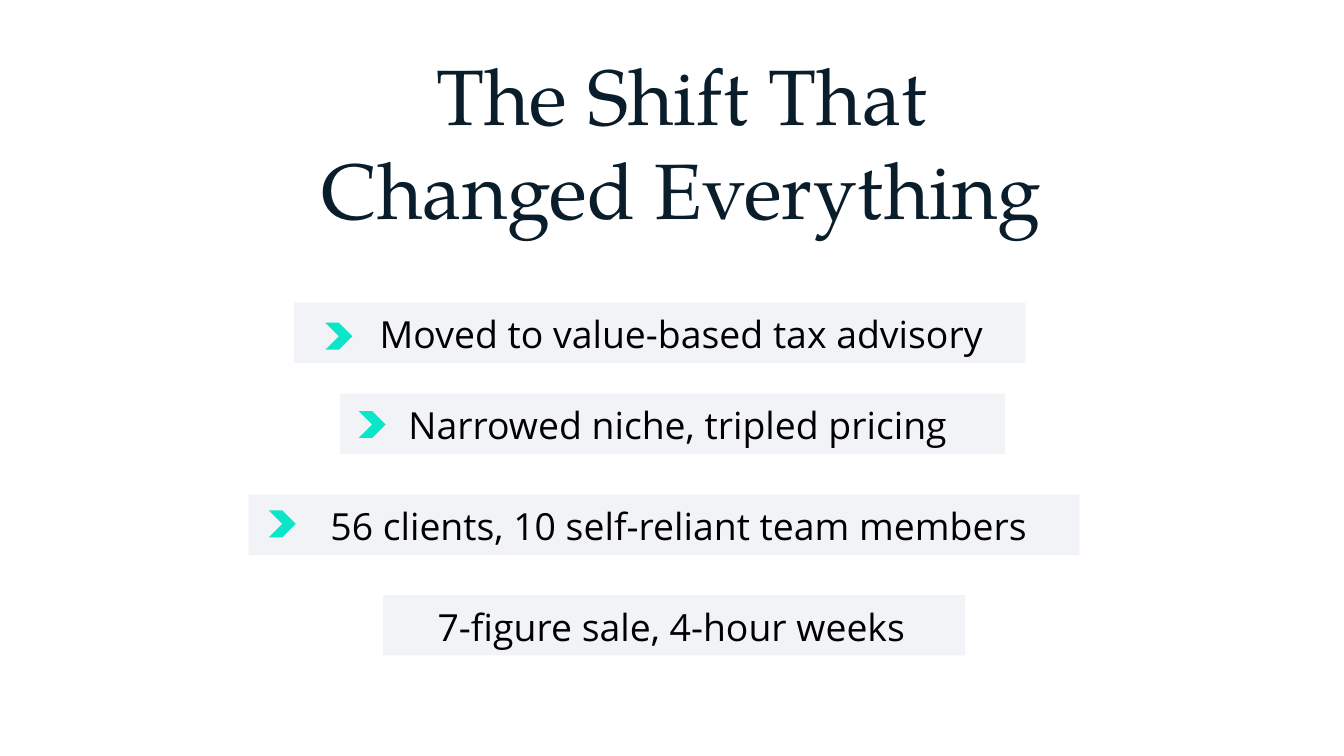
from pptx import Presentation
from pptx.dml.color import RGBColor
from pptx.enum.shapes import MSO_SHAPE
from pptx.enum.text import MSO_ANCHOR, MSO_AUTO_SIZE, PP_ALIGN
from pptx.util import Cm, Pt

RECT, CHEVRON = MSO_SHAPE.RECTANGLE, MSO_SHAPE.CHEVRON
TOP, MIDDLE = MSO_ANCHOR.TOP, MSO_ANCHOR.MIDDLE
CENTER = PP_ALIGN.CENTER
NO_FIT = MSO_AUTO_SIZE.NONE

COLORS = {"title": "0A1D2B", "text": "000000", "bar": "F1F3F7", "chevron": "0AE6C7"}
TITLE_FONT, BODY_FONT = "TeX Gyre Pagella", "Open Sans"
BAR_H, TEXT_H, TEXT_DROP = 1.14, 0.79, 0.19
CHEVRON_SIZE = 0.51

# text, top, bar (left, width), text box (left, width), chevron (left, top)
ROWS = [
    ("Moved to value-based tax advisory", 5.72, (5.56, 13.82), (5.97, 13.82), (6.15, 6.1)),
    ("Narrowed niche, tripled pricing", 7.44, (6.43, 12.57), (6.6, 12.42), (6.78, 7.77)),
    ("56 clients, 10 self-reliant team members", 9.35, (4.7, 15.7), (5.36, 14.94), (5.08, 9.65)),
    ("7-figure sale, 4-hour weeks", 11.25, (7.24, 11), (6.86, 11.66), None),
]


def write(sp, text, font, size, color, anchor):
    tf = sp.text_frame
    tf.word_wrap = True
    tf.auto_size = NO_FIT
    tf.vertical_anchor = anchor
    tf.margin_left = tf.margin_right = tf.margin_top = tf.margin_bottom = Cm(0.25)
    p = tf.paragraphs[0]
    p.text = text
    p.alignment = CENTER
    p.font.name = font
    p.font.size = Pt(size)
    p.font.color.rgb = RGBColor.from_string(COLORS[color])


def add_title(s, text):
    sp = s.shapes.title
    sp.left, sp.top, sp.width, sp.height = Cm(5.08), Cm(0.64), Cm(15.6), Cm(4.14)
    write(sp, text, TITLE_FONT, 42, "title", TOP)


def add_filled(s, kind, left, top, width, height, color):
    sp = s.shapes.add_shape(kind, Cm(left), Cm(top), Cm(width), Cm(height))
    sp.shadow.inherit = False
    sp.fill.solid()
    sp.fill.fore_color.rgb = RGBColor.from_string(COLORS[color])
    sp.line.fill.background()


def add_label(s, text, left, top, width):
    sp = s.shapes.add_textbox(Cm(left), Cm(top), Cm(width), Cm(TEXT_H))
    write(sp, text, BODY_FONT, 20, "text", MIDDLE)


def add_row(s, text, top, bar, label, chevron):
    left, width = bar
    add_filled(s, RECT, left, top, width, BAR_H, "bar")
    left, width = label
    add_label(s, text, left, top + TEXT_DROP, width)
    if chevron:
        add_filled(s, CHEVRON, *chevron, CHEVRON_SIZE, CHEVRON_SIZE, "chevron")


def main():
    prs = Presentation()
    prs.slide_width, prs.slide_height = Cm(25.4), Cm(14.29)
    s = prs.slides.add_slide(prs.slide_layouts[5])
    add_title(s, "The Shift That Changed Everything")
    for row in ROWS:
        add_row(s, *row)
    prs.save("out.pptx")


if __name__ == "__main__":
    main()
